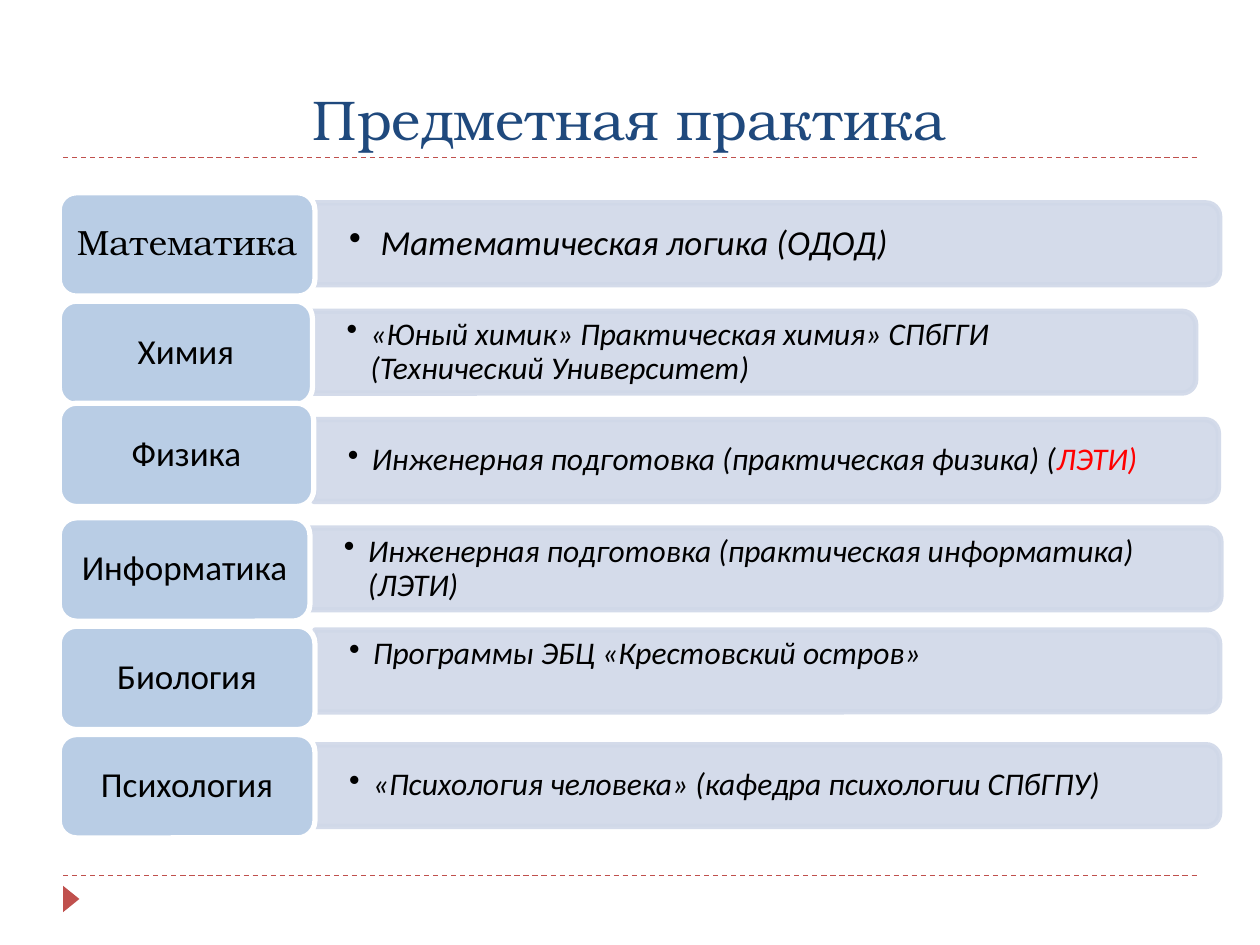
import pptx
import pptx.dml.color
import pptx.enum.dml
import pptx.enum.shapes
import pptx.enum.text
import pptx.oxml.ns
import pptx.util
from lxml import etree
from pptx.util import Inches

SHAPES = pptx.enum.shapes.MSO_SHAPE
ANCHORS = pptx.enum.text.MSO_ANCHOR
ALIGNS = pptx.enum.text.PP_ALIGN
SERIF = "TeX Gyre Bonum"
SANS = "Calibri"
LEFT = 0.47
PITCH = 0.86
LABEL_TOP, LABEL_HEIGHT = 1.53, 0.82
BAR_TOP, BAR_HEIGHT = 1.61, 0.65

SUBJECTS = [
    dict(name="Математика", programs=[("Математическая логика (ОДОД)", "000000")],
         label_width=2.03, bar_width=7.18, label_font=SERIF, size=20, indent=0.25),
    dict(name="Химия", label_width=2.01, bar_width=7.01,
         programs=[("«Юный химик» Практическая химия» СПбГГИ (Технический Университет)", "000000")]),
    dict(name="Физика", label_width=2.02, bar_width=7.18, label_shift=-0.05,
         programs=[("Инженерная подготовка (практическая физика) (", "000000"), ("ЛЭТИ)", "FF0000")]),
    dict(name="Информатика", label_width=1.99, bar_width=7.23,
         programs=[("Инженерная подготовка (практическая информатика) (ЛЭТИ)", "000000")]),
    dict(name="Биология", label_width=2.03, bar_width=7.18, bar_shift=-0.05,
         programs=[("Программы ЭБЦ «Крестовский остров»", "000000")],
         anchor=ANCHORS.TOP, inset_top=0.03),
    dict(name="Психология", label_width=2.03, bar_width=7.18,
         programs=[("«Психология человека» (кафедра психологии СПбГПУ)", "000000")]),
]


def color(value):
    return pptx.dml.color.RGBColor.from_string(value)


def add_child(parent, tag, **attributes):
    return etree.SubElement(parent, pptx.oxml.ns.qn(tag), **attributes)


def write_text(shape, runs, *, font=SANS, size=18, italic=False, align=ALIGNS.LEFT,
               anchor=ANCHORS.MIDDLE, insets=(0.1, 0.05), inset_top=None,
               spacing=0.9, bullet_indent=None):
    frame = shape.text_frame
    frame.word_wrap = True
    frame.vertical_anchor = anchor
    horizontal, vertical = insets
    frame.margin_left = frame.margin_right = Inches(horizontal)
    frame.margin_bottom = Inches(vertical)
    frame.margin_top = Inches(vertical if inset_top is None else inset_top)
    paragraph = frame.paragraphs[0]
    paragraph.alignment = align
    paragraph.line_spacing = spacing
    for text, text_color in runs:
        run = paragraph.add_run()
        run.text = text
        run.font.name = font
        run.font.size = pptx.util.Pt(size)
        run.font.italic = italic
        run.font.color.rgb = color(text_color)
    if bullet_indent:
        properties = paragraph._p.get_or_add_pPr()
        properties.set("marL", str(Inches(bullet_indent)))
        properties.set("indent", str(-Inches(bullet_indent)))
        add_child(properties, "a:buChar", char="•")


def add_panel(slide, preset, box, fill, outline=None, rotation=0, opacity=None):
    panel = slide.shapes.add_shape(preset, *map(Inches, box))
    panel.rotation = rotation
    panel.shadow.inherit = False
    panel.fill.solid()
    panel.fill.fore_color.rgb = color(fill)
    if outline:
        panel.line.color.rgb = color(outline)
        panel.line.width = pptx.util.Pt(3)
    else:
        panel.line.fill.background()
    if opacity:
        for tone in panel._element.spPr.iter(pptx.oxml.ns.qn("a:srgbClr")):
            add_child(tone, "a:alpha", val=str(opacity * 1000))
    return panel


def add_text_box(slide, box, runs, **text_format):
    write_text(slide.shapes.add_textbox(*map(Inches, box)), runs, **text_format)


def add_rule(slide, y):
    rule = slide.shapes.add_connector(pptx.enum.shapes.MSO_CONNECTOR.STRAIGHT,
                                      Inches(0.5), Inches(y), Inches(9.5), Inches(y))
    rule.line.color.rgb = color("C0504D")
    rule.line.width = pptx.util.Pt(0.75)
    rule.line.dash_style = pptx.enum.dml.MSO_LINE.DASH
    add_child(rule._element.spPr, "a:effectLst")


def add_subject(slide, row, name, programs, label_width, bar_width, label_font=SANS,
                size=18, indent=0.19, label_shift=0, bar_shift=0,
                anchor=ANCHORS.MIDDLE, inset_top=None):
    bar_left = LEFT + label_width
    bar_top = BAR_TOP + row * PITCH + bar_shift
    turned_left = bar_left + (bar_width - BAR_HEIGHT) / 2
    turned_top = bar_top + (BAR_HEIGHT - bar_width) / 2
    add_panel(slide, SHAPES.ROUND_2_SAME_RECTANGLE,
              (turned_left, turned_top, BAR_HEIGHT, bar_width),
              "D0D8E8", outline="D0D8E8", rotation=90, opacity=90)
    add_text_box(slide, (bar_left, bar_top + 0.03, bar_width - 0.03, BAR_HEIGHT - 0.06),
                 programs, size=size, italic=True, anchor=anchor,
                 insets=(0.27, 0.14), inset_top=inset_top, bullet_indent=indent)
    label_top = LABEL_TOP + row * PITCH + label_shift
    label = add_panel(slide, SHAPES.ROUNDED_RECTANGLE,
                      (LEFT, label_top, label_width, LABEL_HEIGHT),
                      "B9CDE5", outline="FFFFFF")
    write_text(label, [(name, "000000")], font=label_font, size=20,
               align=ALIGNS.CENTER, insets=(0.08, 0.04))


def main():
    presentation = pptx.Presentation()
    presentation.slide_width = Inches(10)
    presentation.slide_height = Inches(7.5)
    slide = presentation.slides.add_slide(presentation.slide_layouts[6])
    for y in (6.95, 1.25):
        add_rule(slide, y)
    add_panel(slide, SHAPES.ISOSCELES_TRIANGLE, (0.46, 7.07, 0.21, 0.13),
              "C0504D", rotation=90)
    add_text_box(slide, (0.5, 0.25, 9, 1), [("Предметная практика", "1F497D")],
                 font=SERIF, size=32, align=ALIGNS.CENTER, anchor=ANCHORS.BOTTOM, spacing=1.0)
    for row, subject in enumerate(SUBJECTS):
        add_subject(slide, row, **subject)
    presentation.save("out.pptx")


if __name__ == "__main__":
    main()
